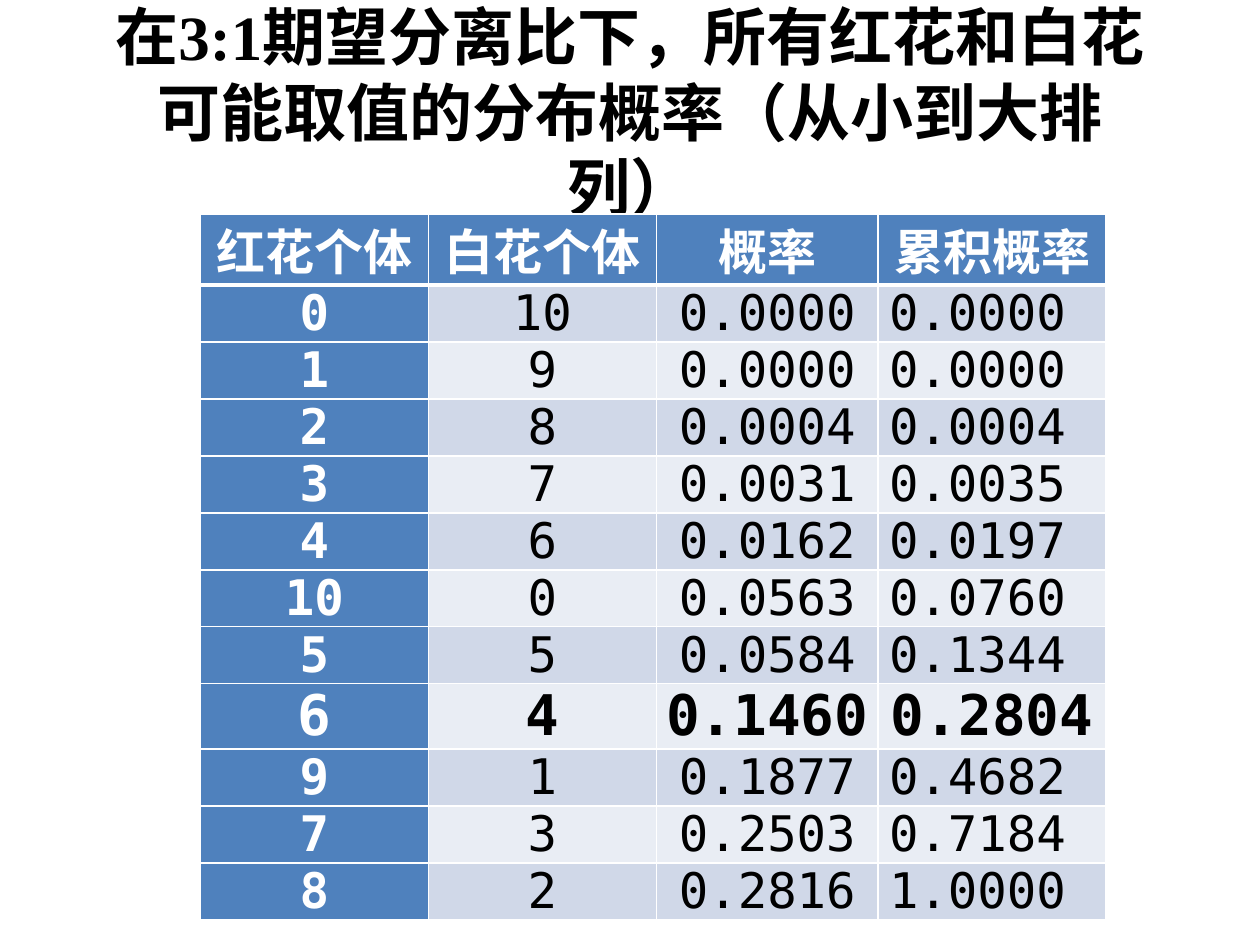
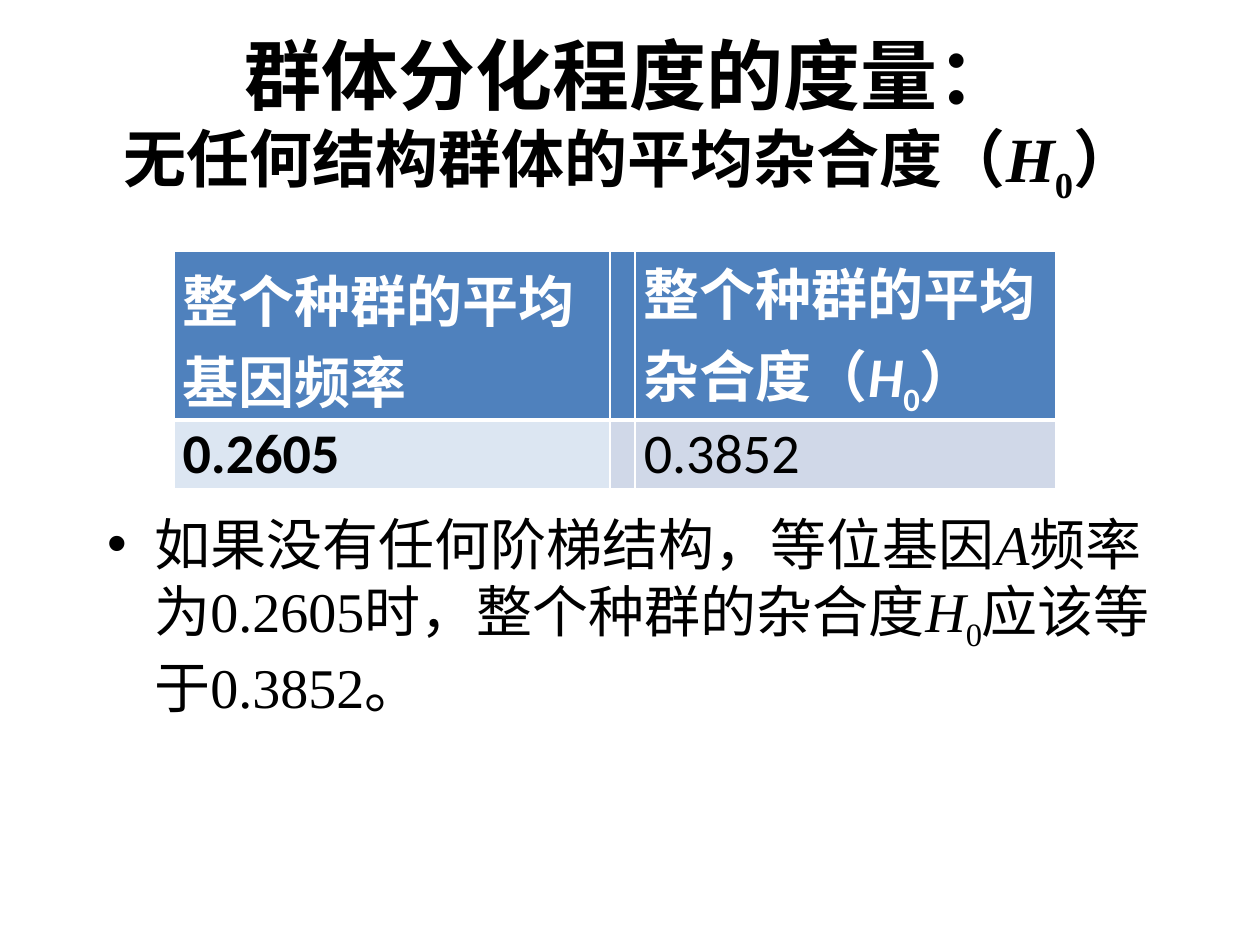
from pptx import Presentation
from pptx.dml.color import RGBColor
from pptx.enum.lang import MSO_LANGUAGE_ID
from pptx.enum.text import MSO_ANCHOR, MSO_AUTO_SIZE, PP_ALIGN
from pptx.oxml import parse_xml
from pptx.oxml.ns import nsdecls
from pptx.util import Inches, Pt

BLACK, WHITE, BLUE = "000000", "FFFFFF", "4F81BD"
BAND_DARK, BAND_LIGHT, PALE_BLUE = "D0D8E8", "E9EDF4", "DCE6F2"
SERIF, SANS, MONO = "Times New Roman", "Calibri", "DejaVu Sans Mono"
ITALIC, SUBSCRIPT = {"italic": True}, {"baseline": -25}


def rgb(value):
    return RGBColor.from_string(value)


class Deck:
    TITLE_ONLY, TITLE_AND_BODY = 5, 1

    def __init__(self):
        self.prs = Presentation()
        self.prs.slide_width, self.prs.slide_height = Inches(10), Inches(7.5)
        self.slide = None

    def new_slide(self, layout):
        self.slide = self.prs.slides.add_slide(self.prs.slide_layouts[layout])

    def add_text(self, paragraph, parts, **style):
        """Fill a paragraph; a part is a string or (string, format changes)."""
        for part in [parts] if isinstance(parts, str) else parts:
            text, changes = (part, {}) if isinstance(part, str) else part
            run = paragraph.add_run()
            run.text = text
            values = {"language_id": MSO_LANGUAGE_ID.SIMPLIFIED_CHINESE, **style, **changes}
            run.font.color.rgb = rgb(values.pop("color", BLACK))
            run.font.size = Pt(values.pop("size"))
            if "baseline" in values:
                run._r.get_or_add_rPr().set("baseline", str(values.pop("baseline") * 1000))
            for name, value in values.items():
                setattr(run.font, name, value)

    def place(self, placeholder, box):
        for name, value in zip(("left", "top", "width", "height"), box):
            setattr(placeholder, name, Inches(value))
        frame = placeholder.text_frame
        frame.word_wrap = True
        frame.auto_size = MSO_AUTO_SIZE.NONE
        return frame

    def title(self, lines, box):
        """Set a title from (parts, size) lines joined by line breaks."""
        frame = self.place(self.slide.shapes.title, box)
        frame.vertical_anchor = MSO_ANCHOR.MIDDLE
        paragraph = frame.paragraphs[0]
        paragraph.alignment = PP_ALIGN.CENTER
        for number, (parts, size) in enumerate(lines):
            if number:
                paragraph.add_line_break()
            self.add_text(paragraph, parts, name=SERIF, size=size, bold=True)

    def bullet(self, parts, box):
        frame = self.place(self.slide.placeholders[1], box)
        self.add_text(frame.paragraphs[0], parts, name=SERIF, size=32)

    def table(self, origin, widths, heights):
        left, top = map(Inches, origin)
        table = self.slide.shapes.add_table(
            len(heights), len(widths), left, top,
            Inches(sum(widths)), Inches(sum(heights))).table
        for column, width in zip(table.columns, widths):
            column.width = Inches(width)
        for row, height in zip(table.rows, heights):
            row.height = Inches(height)
        return table

    def cell(self, table, row, col, parts, fill, align=PP_ALIGN.LEFT, **style):
        cell = table.cell(row, col)
        cell.vertical_anchor = MSO_ANCHOR.BOTTOM
        margins = {"left": 0.07, "right": 0.07, "top": 0, "bottom": 0}
        for side, margin in margins.items():
            setattr(cell, f"margin_{side}", Inches(margin))
        self.borders(cell, row)
        cell.fill.solid()
        cell.fill.fore_color.rgb = rgb(fill)
        paragraph = cell.text_frame.paragraphs[0]
        paragraph.alignment = align
        self.add_text(paragraph, parts, **style)

    def borders(self, cell, row):
        """Draw white cell edges, with a thick rule under the header row."""
        widths = {"L": 1, "R": 1, "T": 3 if row == 1 else 1, "B": 3 if row == 0 else 1}
        for side, width in widths.items():
            cell._tc.get_or_add_tcPr().append(parse_xml(
                f'<a:ln{side} {nsdecls("a")} w="{Pt(width)}"><a:solidFill>'
                f'<a:srgbClr val="{WHITE}"/></a:solidFill></a:ln{side}>'))


def probability_slide(deck):
    deck.new_slide(deck.TITLE_ONLY)
    deck.title([("在3:1期望分离比下，所有红花和白花可能取值的分布概率（从小到大排列）", 36)],
               (0.67, 0.21, 8.66, 1.34))
    headers = ["红花个体", "白花个体", "概率", "累积概率"]
    outcomes = [
        (0, "0.0000", "0.0000"), (1, "0.0000", "0.0000"), (2, "0.0004", "0.0004"),
        (3, "0.0031", "0.0035"), (4, "0.0162", "0.0197"), (10, "0.0563", "0.0760"),
        (5, "0.0584", "0.1344"), (6, "0.1460", "0.2804"), (9, "0.1877", "0.4682"),
        (7, "0.2503", "0.7184"), (8, "0.2816", "1.0000"),
    ]
    flowers, observed_red = 10, 6
    rows = [headers] + [[str(red), str(flowers - red), f"{chance} ", f"{total} "]
                        for red, chance, total in outcomes]
    observed_row = 1 + [red for red, _, _ in outcomes].index(observed_red)
    heights = [0.55] + [0.45] * len(outcomes)
    heights[observed_row] = 0.52
    table = deck.table((1.59, 1.7), [1.81, 1.81, 1.76, 1.81], heights)
    table.first_col = True
    for r, row in enumerate(rows):
        for c, text in enumerate(row):
            heading, observed = r == 0 or c == 0, r == observed_row
            band = BAND_DARK if r % 2 else BAND_LIGHT
            deck.cell(table, r, c, text, BLUE if heading else band, PP_ALIGN.CENTER,
                      name=MONO, size=32 if observed else 28,
                      bold=heading or observed, color=WHITE if heading else BLACK)


def heterozygosity_slide(deck):
    deck.new_slide(deck.TITLE_AND_BODY)
    h0 = [("H", ITALIC), ("0", SUBSCRIPT)]
    deck.title([("群体分化程度的度量：", 44),
                (["无任何结构群体的平均杂合度（", *h0, "）"], 36)],
               (0.5, 0.3, 9, 1.25))
    deck.bullet(["如果没有任何阶梯结构，等位基因", ("A", ITALIC),
                 "频率为0.2605时，整个种群的杂合度", *h0, "应该等于0.3852。"],
                (0.75, 3.99, 8.58, 1.97))
    table = deck.table((1.38, 1.99), [3.46, 0.2, 3.34], [1.33, 0.54])
    headers = ["整个种群的平均基因频率", [], ["整个种群的平均杂合度（", *h0, "）"]]
    values = [("0.2605", PALE_BLUE), ([], BAND_DARK), ("0.3852", BAND_DARK)]
    for c, (header, (value, fill)) in enumerate(zip(headers, values)):
        deck.cell(table, 0, c, header, BLUE, name=SANS, size=32, bold=True, color=WHITE)
        deck.cell(table, 1, c, value, fill, name=SANS, size=32, bold=c == 0)


def main():
    deck = Deck()
    probability_slide(deck)
    heterozygosity_slide(deck)
    deck.prs.save("out.pptx")


if __name__ == "__main__":
    main()
